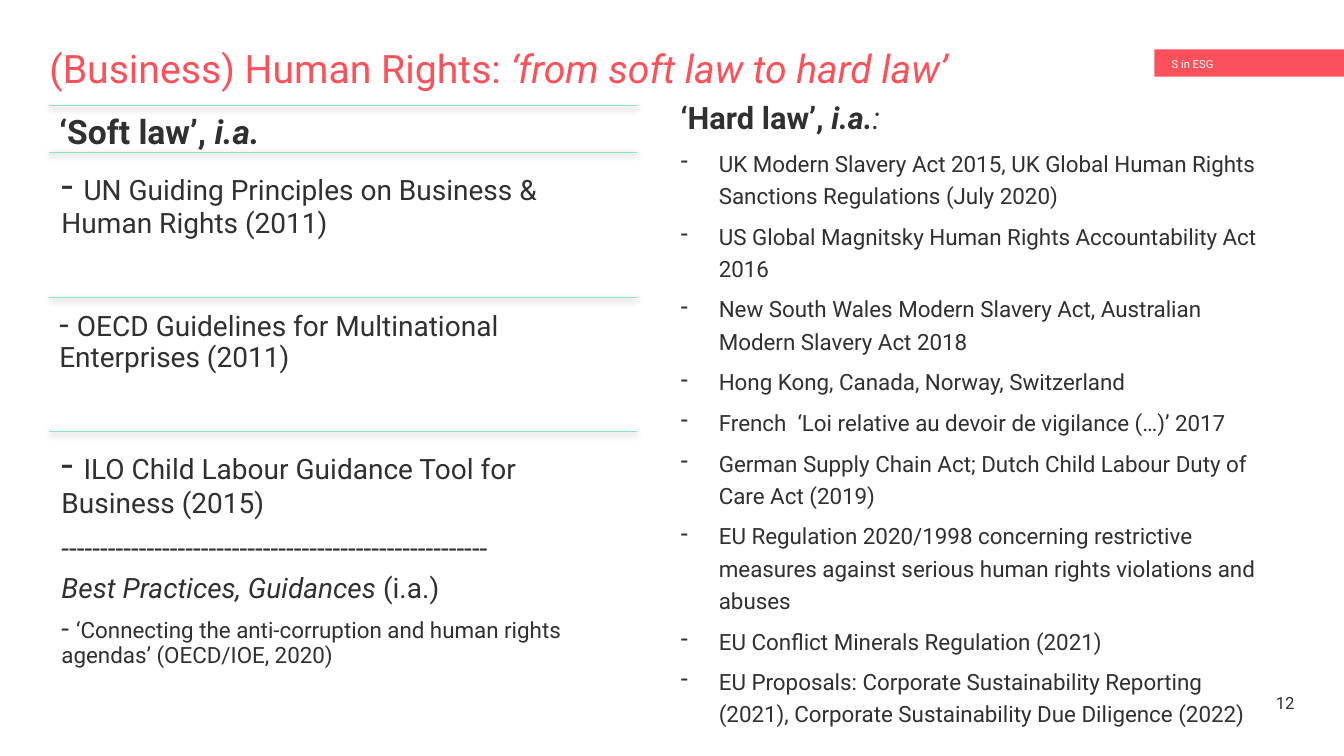
import pptx
import pptx.util
import pptx.dml.color
import pptx.enum.shapes
import pptx.enum.text
import pptx.oxml
import pptx.oxml.ns
import lxml.etree

WIDE, HIGH = 13.33, 7.5
EDGE, COL, GAP = 0.49, 5.83, 0.43
RED, INK, MINT, WHITE = "FC515B", "303030", "88E5BD", "FFFFFF"
FONT = "Roboto"

inch = pptx.util.Inches
pt = pptx.util.Pt
qn = pptx.oxml.ns.qn
ALIGN = pptx.enum.text.PP_ALIGN
ANCHOR = pptx.enum.text.MSO_ANCHOR

SOFT = [
    (0.46, 0.1, [[("‘Soft law’, ", 24, "b"), ("i.a.", 24, "bi")]]),
    (1.44, 0.12, [[("- ", 30, ""),
                   ("UN Guiding Principles on Business & Human Rights (2011)", 20, "")]]),
    (1.33, 0.1, [[("- ", 24, ""),
                  ("OECD Guidelines for Multinational Enterprises (2011)", 20, "")]]),
    (2.92, 0.12, [
        [("- ", 30, ""), ("ILO Child Labour Guidance Tool for Business (2015)", 20, "")],
        [("-" * 55, 20, "")],
        [("Best Practices, Guidances ", 20, "i"), ("(i.a.)", 20, "")],
        [("- ", 20, ""),
         ("‘Connecting the anti-corruption and human rights agendas’ (OECD/IOE, 2020)", 16, "")],
    ]),
]

HARD = [
    "UK Modern Slavery Act 2015, UK Global Human Rights Sanctions Regulations (July 2020)",
    "US Global Magnitsky Human Rights Accountability Act 2016",
    "New South Wales Modern Slavery Act, Australian Modern Slavery Act 2018",
    "Hong Kong, Canada, Norway, Switzerland",
    "French  ‘Loi relative au devoir de vigilance (…)’ 2017",
    "German Supply Chain Act; Dutch Child Labour Duty of Care Act (2019)",
    "EU Regulation 2020/1998 concerning restrictive measures against serious human rights "
    "violations and abuses",
    "EU Conflict Minerals Regulation (2021)",
    "EU Proposals: Corporate Sustainability Reporting (2021), Corporate Sustainability "
    "Due Diligence (2022)",
]


def tint(target, code):
    target.rgb = pptx.dml.color.RGBColor.from_string(code)


def frame(shape, pad=(0, 0, 0, 0), anchor=ANCHOR.TOP):
    text = shape.text_frame
    text.word_wrap = True
    text.vertical_anchor = anchor
    text.margin_left, text.margin_top, text.margin_right, text.margin_bottom = map(inch, pad)
    return text


def textbox(slide, box, pad=0, anchor=ANCHOR.TOP):
    shape = slide.shapes.add_textbox(*map(inch, box))
    return frame(shape, (pad,) * 4, anchor)


def write(para, runs, color=INK, lead=0.9, after=0, align=ALIGN.LEFT):
    para.line_spacing = lead
    para.space_after = pt(after)
    para.alignment = align
    for words, size, style in runs:
        run = para.add_run()
        run.text = words
        run.font.name = FONT
        run.font.size = pt(size)
        run.font.bold = "b" in style
        run.font.italic = "i" in style
        tint(run.font.color, color)


def fill(text, paras, **look):
    for index, runs in enumerate(paras):
        para = text.add_paragraph() if index else text.paragraphs[0]
        after = 0.35 * max(size for _, size, _ in runs)
        write(para, runs, after=round(after, 1), **look)


def dash(para, indent):
    props = para._p.get_or_add_pPr()
    props.set("marL", str(inch(indent)))
    props.set("indent", str(-inch(indent)))
    lxml.etree.SubElement(props, qn("a:buChar"), char="-")


def rule(slide, left, top, width):
    line = slide.shapes.add_connector(
        pptx.enum.shapes.MSO_CONNECTOR.STRAIGHT,
        inch(left), inch(top), inch(left + width), inch(top))
    line.line.width = pt(0.5)
    tint(line.line.color, MINT)
    effects = lxml.etree.SubElement(line._element.spPr, qn("a:effectLst"))
    shade = lxml.etree.SubElement(
        effects, qn("a:outerShdw"), blurRad=str(pt(4.5)), dist=str(pt(1.5)),
        dir="5400000", algn="ctr", rotWithShape="0")
    black = lxml.etree.SubElement(shade, qn("a:srgbClr"), val="000000")
    lxml.etree.SubElement(black, qn("a:alpha"), val="63000")


def title(slide, box):
    runs = [("(Business) Human Rights: ", 28, ""), ("‘from soft law to hard law’", 28, "i")]
    write(textbox(slide, box).paragraphs[0], runs, RED)


def tag(slide, box):
    shape = slide.shapes.add_shape(
        pptx.enum.shapes.MSO_SHAPE.RECTANGLE, *map(inch, box))
    shape.shadow.inherit = False
    shape.fill.solid()
    tint(shape.fill.fore_color, RED)
    shape.line.fill.background()
    text = frame(shape, (0.17, 0, 0, 0), ANCHOR.MIDDLE)
    write(text.paragraphs[0], [("S in ESG", 8, "")], WHITE, 1.2)


def soft(slide, box):
    left, top, width, _ = box
    for tall, pad, paras in SOFT:
        rule(slide, left, top, width)
        fill(textbox(slide, (left, top, width, tall), pad), paras)
        top += tall


def hard(slide, box):
    text = textbox(slide, box)
    head = [("‘Hard law’, ", 22, "b"), ("i.a.", 22, "bi"), (":", 22, "i")]
    write(text.paragraphs[0], head, lead=1.2, after=6)
    for law in HARD:
        para = text.add_paragraph()
        dash(para, 0.38)
        write(para, [(law, 16, "")], lead=1.2, after=6)


def number(slide, box):
    text = textbox(slide, box, anchor=ANCHOR.BOTTOM)
    write(text.paragraphs[0], [("12", 12, "")], after=6, align=ALIGN.RIGHT)


def main():
    deck = pptx.Presentation()
    deck.slide_width, deck.slide_height = inch(WIDE), inch(HIGH)
    slide = deck.slides.add_slide(deck.slide_layouts[6])
    title(slide, (EDGE, EDGE, 10.63, 0.43))
    tag(slide, (WIDE - 1.88, EDGE, 1.88, 0.27))
    soft(slide, (EDGE, 1.05, COL, 6.15))
    hard(slide, (EDGE + COL + GAP, 0.91, COL, 6.35))
    number(slide, (WIDE - EDGE - 0.35, 6.8, 0.35, 0.27))
    deck.save("out.pptx")


if __name__ == "__main__":
    main()
